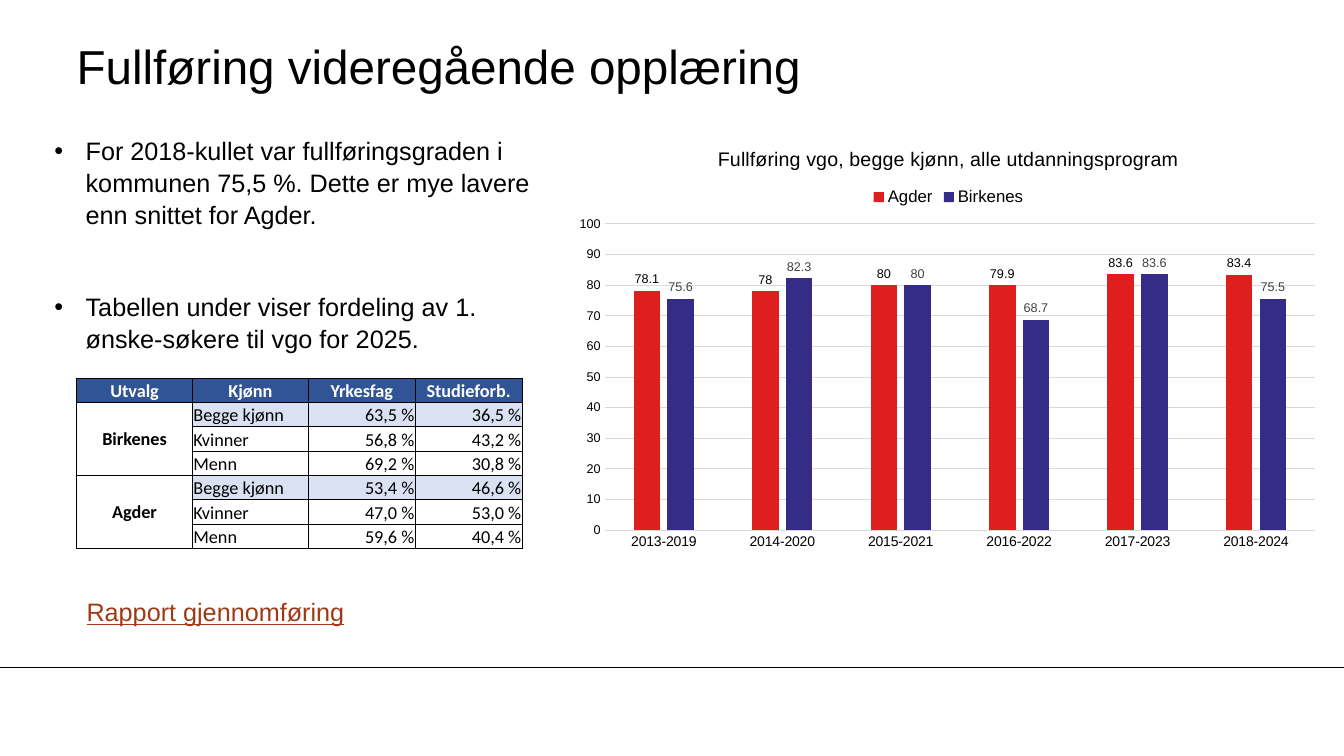
from lxml.etree import SubElement
from pptx import Presentation
from pptx.chart.data import CategoryChartData
from pptx.dml.color import RGBColor
from pptx.enum.chart import XL_CHART_TYPE as ChartType, XL_LABEL_POSITION as LabelPosition
from pptx.enum.chart import XL_LEGEND_POSITION as LegendPosition, XL_TICK_MARK as TickMark
from pptx.enum.shapes import MSO_CONNECTOR as Connector
from pptx.enum.text import MSO_ANCHOR as Anchor, MSO_AUTO_SIZE as AutoSize, PP_ALIGN as Align
from pptx.oxml.ns import qn
from pptx.util import Inches, Pt

THEME = {
    "font": "Arial", "table font": "Calibri",
    "ink": "000000", "paper": "FFFFFF", "link": "9F3A14",
    "header": "305496", "total": "D9E1F2", "grid": "D9D9D9", "soft ink": "404040",
    "Agder": "DF1F1D", "Birkenes": "342C86",
    "title": 34, "body": 18, "table": 13, "chart title": 14,
    "legend": 12, "axis": 10, "small": 9,
}

deck = Presentation()
deck.slide_width, deck.slide_height = Inches(13.33), Inches(7.5)
slide = deck.slides.add_slide(deck.slide_layouts[1])


def area(left, top, width, height):
    across, down = deck.slide_width / 100, deck.slide_height / 100
    return [round(share) for share in (left * across, top * down, width * across, height * down)]


def style(font, size, color="ink", face="font", bold=False):
    font.name, font.size, font.bold = THEME[face], Pt(THEME[size]), bold
    font.color.rgb = RGBColor.from_string(THEME[color])


rule_left, rule_top, rule_width, _ = area(0, 88.27, 100, 0)
rule = slide.shapes.add_connector(Connector.STRAIGHT, rule_left, rule_top, rule_width, rule_top)
rule.line.color.rgb = RGBColor.from_string(THEME["ink"])
rule.line.width = Pt(0.75)
SubElement(rule.element.spPr, qn("a:effectLst"))

heading = slide.shapes.title
heading.left, heading.top, heading.width, heading.height = area(5.7, 3.6, 83.25, 10)
frame = heading.text_frame
frame.margin_left = frame.margin_right = frame.margin_top = frame.margin_bottom = 0
frame.vertical_anchor = Anchor.MIDDLE
frame.auto_size = AutoSize.NONE
frame.paragraphs[0].alignment = Align.LEFT
run = frame.paragraphs[0].add_run()
run.text = "Fullføring videregående opplæring"
style(run.font, "title")

findings = slide.placeholders[1]
findings.left, findings.top, findings.width, findings.height = area(3.3, 17.07, 38.78, 29.6)
findings.text_frame.auto_size = AutoSize.NONE
points = [
    ("For 2018-kullet var fullføringsgraden i kommunen 75,5 %. "
     "Dette er mye lavere enn snittet for Agder.", 0),
    ("Tabellen under viser fordeling av 1. ønske-søkere til vgo for 2025.", 43.5),
]
for number, (sentence, gap) in enumerate(points):
    point = findings.text_frame.paragraphs[0] if number == 0 else findings.text_frame.add_paragraph()
    indents = point._p.get_or_add_pPr()
    indents.set("marL", str(Inches(0.31)))
    indents.set("indent", str(-Inches(0.31)))
    point.space_before, point.line_spacing = Pt(gap), 1.05
    SubElement(indents, qn("a:buFont"), typeface=THEME["font"])
    SubElement(indents, qn("a:buChar"), char="•")
    run = point.add_run()
    run.text = sentence
    style(run.font, "body")

applicants = [
    ("Utvalg", "Kjønn", "Yrkesfag", "Studieforb."),
    ("Birkenes", "Begge kjønn", "63,5 %", "36,5 %"),
    ("", "Kvinner", "56,8 %", "43,2 %"),
    ("", "Menn", "69,2 %", "30,8 %"),
    ("Agder", "Begge kjønn", "53,4 %", "46,6 %"),
    ("", "Kvinner", "47,0 %", "53,0 %"),
    ("", "Menn", "59,6 %", "40,4 %"),
]
table_area = area(5.7, 50, 33.15, 22.53)
shares = slide.shapes.add_table(len(applicants), 4, *table_area).table
shares.first_row = shares.horz_banding = False
for column, width in zip(shares.columns, (0.26, 0.26, 0.24, 0.24)):
    column.width = round(table_area[2] * width)
for row, entries in enumerate(applicants):
    shares.rows[row].height = table_area[3] // len(applicants)
    for column, entry in enumerate(entries):
        cell = shares.cell(row, column)
        cell.margin_left = cell.margin_right = cell.margin_top = Inches(0.01)
        cell.margin_bottom = 0
        is_header, is_group = row == 0, row > 0 and column == 0
        cell.vertical_anchor = Anchor.MIDDLE if is_group else Anchor.BOTTOM
        for side in ("a:lnL", "a:lnR", "a:lnT", "a:lnB"):
            border = SubElement(cell._tc.get_or_add_tcPr(), qn(side), w=str(Pt(0.5)))
            SubElement(SubElement(border, qn("a:solidFill")), qn("a:srgbClr"), val=THEME["ink"])
        is_total = entries[1] == "Begge kjønn" and not is_group
        shade = "header" if is_header else "total" if is_total else "paper"
        cell.fill.solid()
        cell.fill.fore_color.rgb = RGBColor.from_string(THEME[shade])
        line = cell.text_frame.paragraphs[0]
        centred = is_header or is_group
        line.alignment = Align.CENTER if centred else Align.LEFT if column == 1 else Align.RIGHT
        if entry:
            run = line.add_run()
            run.text = entry
            style(run.font, "table", "paper" if is_header else "ink", "table font", centred)
for first in (1, 4):
    shares.cell(first, 0).merge(shares.cell(first + 2, 0))

report = slide.shapes.add_textbox(*area(5.7, 78.27, 21.08, 5.33)).text_frame
report.word_wrap = True
run = report.paragraphs[0].add_run()
run.text = "Rapport gjennomføring"
style(run.font, "body", "link")
run.font.underline = True

completion = CategoryChartData(number_format="General")
completion.categories = [f"{year}-{year + 6}" for year in range(2013, 2019)]
completion.add_series("Agder", (78.1, 78, 80, 79.9, 83.6, 83.4))
completion.add_series("Birkenes", (75.6, 82.3, 80, 68.7, 83.6, 75.5))
chart = slide.shapes.add_chart(
    ChartType.COLUMN_CLUSTERED, *area(42.15, 17.07, 56.85, 57.07), completion).chart
style(chart.font, "axis")
run = chart.chart_title.text_frame.paragraphs[0].add_run()
run.text = "Fullføring vgo, begge kjønn, alle utdanningsprogram"
style(run.font, "chart title")
chart.has_legend = True
chart.legend.position = LegendPosition.TOP
chart.legend.include_in_layout = False
style(chart.legend.font, "legend")

bars = chart.plots[0]
bars.gap_width, bars.overlap, bars.vary_by_categories = 219, -27, False
for series, label_color in zip(bars.series, ("ink", "soft ink")):
    series.format.fill.solid()
    series.format.fill.fore_color.rgb = RGBColor.from_string(THEME[series.name])
    labels = series.data_labels
    labels.show_value = True
    labels.position = LabelPosition.OUTSIDE_END
    style(labels.font, "small", label_color)

periods, percent = chart.category_axis, chart.value_axis
for axis, size in ((periods, "axis"), (percent, "small")):
    axis.major_tick_mark = axis.minor_tick_mark = TickMark.NONE
    style(axis.tick_labels.font, size)
percent.minimum_scale, percent.maximum_scale, percent.major_unit = 0, 100, 10
percent.tick_labels.number_format = "#,##0"
percent.tick_labels.number_format_is_linked = False
percent.has_major_gridlines = True
percent.format.line.fill.background()
for stroke in (periods.format.line, percent.major_gridlines.format.line):
    stroke.color.rgb = RGBColor.from_string(THEME["grid"])
    stroke.width = Pt(0.75)

plot_area = chart.element.chart.plotArea
for layout in plot_area.findall(qn("c:layout")):
    plot_area.remove(layout)
layout = SubElement(plot_area, qn("c:layout"))
plot_area.insert(0, layout)
manual = SubElement(layout, qn("c:manualLayout"))
for tag, setting in (("layoutTarget", "inner"), ("xMode", "edge"), ("yMode", "edge"),
                     ("x", "0.05"), ("y", "0.22"), ("w", "0.93"), ("h", "0.71")):
    SubElement(manual, qn(f"c:{tag}"), val=setting)

deck.save("out.pptx")
